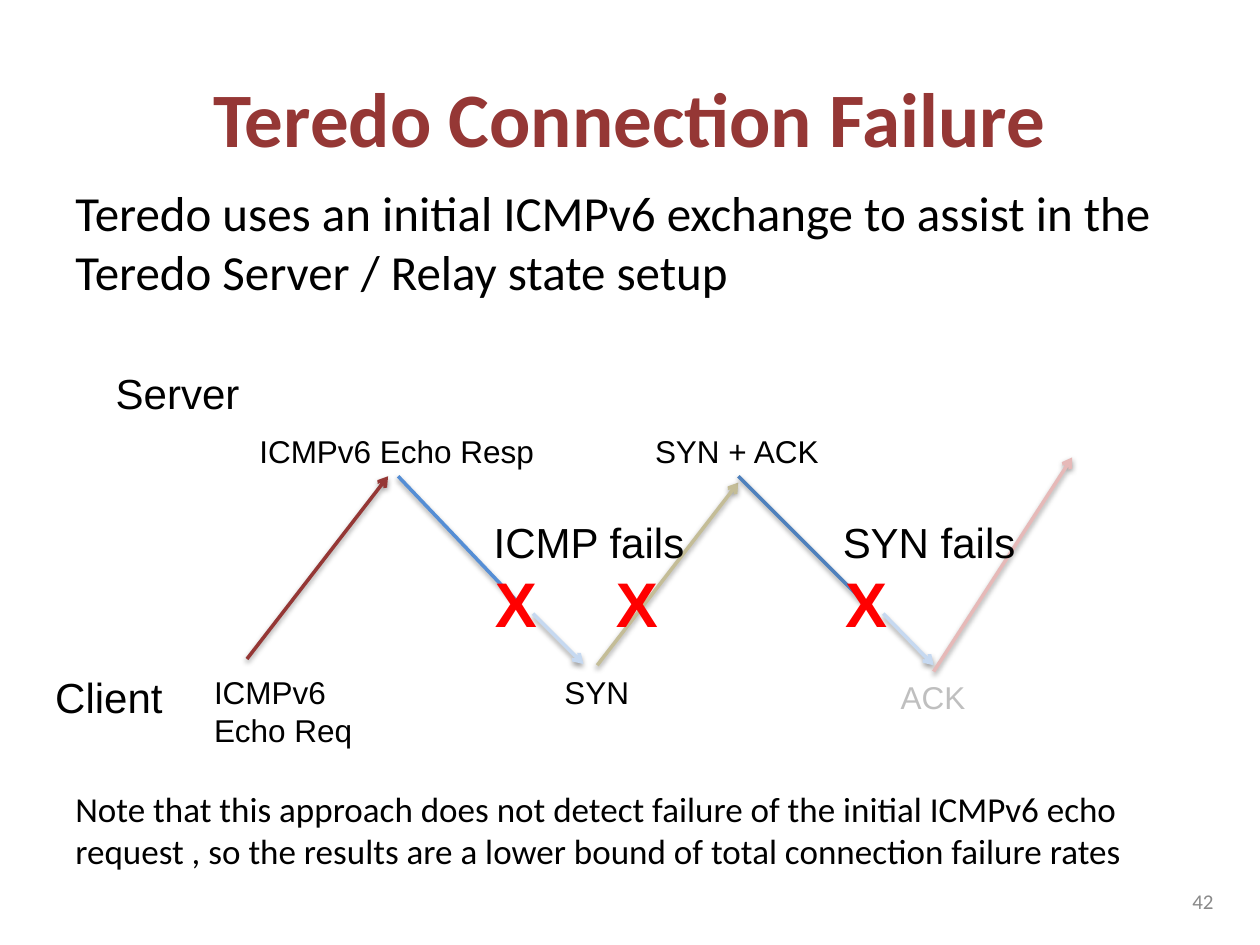
from lxml import etree
from pptx import Presentation
from pptx.dml.color import RGBColor
from pptx.enum.shapes import MSO_CONNECTOR
from pptx.enum.text import MSO_ANCHOR, PP_ALIGN
from pptx.oxml import parse_xml
from pptx.oxml.ns import qn
from pptx.util import Inches, Pt

STRAIGHT = MSO_CONNECTOR.STRAIGHT
TOP, MIDDLE = MSO_ANCHOR.TOP, MSO_ANCHOR.MIDDLE
LEFT, CENTER, RIGHT = PP_ALIGN.LEFT, PP_ALIGN.CENTER, PP_ALIGN.RIGHT

COLORS = {
    "black": "000000", "maroon": "953735", "gray": "898989", "faded": "BFBFBF",
    "red": "FF0000", "tan": "C4BD97", "pale_blue": "C6D9F1", "pink": "E6B9B8",
    "blue": "4F81BD", "bright_blue": "558ED5",
}
SHADOW = (
    '<a:effectLst xmlns:a="http://schemas.openxmlformats.org/drawingml/2006/main">'
    '<a:outerShdw blurRad="40000" dist="20000" dir="5400000" rotWithShape="0">'
    '<a:srgbClr val="000000"><a:alpha val="38000"/></a:srgbClr>'
    '</a:outerShdw></a:effectLst>'
)

prs = Presentation()
prs.slide_width, prs.slide_height = Inches(10), Inches(7.5)
s = prs.slides.add_slide(prs.slide_layouts[6])


def add_text(text, x, y, w, h, size, color="black", font="Arial", bold=False,
             align=LEFT, anchor=TOP, wrap=False):
    tf = s.shapes.add_textbox(Inches(x), Inches(y), Inches(w), Inches(h)).text_frame
    tf.word_wrap = wrap
    tf.vertical_anchor = anchor
    tf.text = text
    for p in tf.paragraphs:
        p.alignment = align
        for r in p.runs:
            r.font.name, r.font.size, r.font.bold = font, Pt(size), bold
            r.font.color.rgb = RGBColor.from_string(COLORS[color])


def add_message(x1, y1, x2, y2, color, arrow):
    """Draw one packet's path, with an arrowhead where it arrives."""
    line = s.shapes.add_connector(STRAIGHT, Inches(x1), Inches(y1), Inches(x2), Inches(y2))
    line.line.color.rgb = RGBColor.from_string(COLORS[color])
    line.line.width = Pt(2)
    if arrow:
        etree.SubElement(line.line._get_or_add_ln(), qn("a:tailEnd"), type="arrow")
    line._element.spPr.append(parse_xml(SHADOW))


# Title, body and slide number
add_text("Teredo Connection Failure", 0.5, 0.3, 9, 1.25, 44, "maroon", "Calibri",
         bold=True, align=CENTER, anchor=MIDDLE, wrap=True)
add_text("Teredo uses an initial ICMPv6 exchange to assist in the "
         "Teredo Server / Relay state setup", 0.5, 1.4, 9, 1.1, 28, font="Calibri", wrap=True)
add_text("Note that this approach does not detect failure of the initial ICMPv6 echo "
         "request , so the results are a lower bound of total connection failure rates",
         0.5, 6.2, 9, 0.8, 20, font="Calibri", wrap=True)
add_text("42", 7.4, 6.95, 2.33, 0.4, 12, "gray", "Calibri",
         align=RIGHT, anchor=MIDDLE, wrap=True)

# Packet paths between client and server
for message in [
    (4.74, 5.28, 5.86, 3.83, "tan", True),
    (7.01, 4.87, 7.41, 5.28, "pale_blue", True),
    (7.41, 5.33, 8.51, 3.63, "pink", True),
    (5.86, 3.78, 6.86, 4.78, "blue", False),
    (4.23, 4.87, 4.63, 5.27, "pale_blue", True),
    (3.16, 3.78, 4.11, 4.78, "bright_blue", False),
    (1.96, 5.23, 3.08, 3.78, "maroon", True),
]:
    add_message(*message)

# Hosts and failure captions
for text, x, y, w in [
    ("Client", 0.34, 5.28, 1.07),
    ("Server", 0.82, 2.87, 1.2),
    ("ICMP fails", 3.82, 4.05, 1.73),
    ("SYN fails", 6.59, 4.05, 1.59),
]:
    add_text(text, x, y, w, 0.51, 24)

# Packet names
for text, x, y, w, h, color in [
    ("ICMPv6\nEcho Req", 1.6, 5.29, 1.31, 0.71, "black"),
    ("ICMPv6 Echo Resp", 1.96, 3.38, 2.4, 0.4, "black"),
    ("SYN", 4.38, 5.29, 0.72, 0.4, "black"),
    ("SYN + ACK", 5.1, 3.38, 1.52, 0.4, "black"),
    ("ACK", 7.05, 5.33, 0.73, 0.4, "faded"),
]:
    add_text(text, x, y, w, h, 18, color)

# Lost packets
for x in (3.83, 4.79, 6.61):
    add_text("X", x, 4.43, 0.54, 0.71, 36, "red", bold=True)

prs.save("out.pptx")
